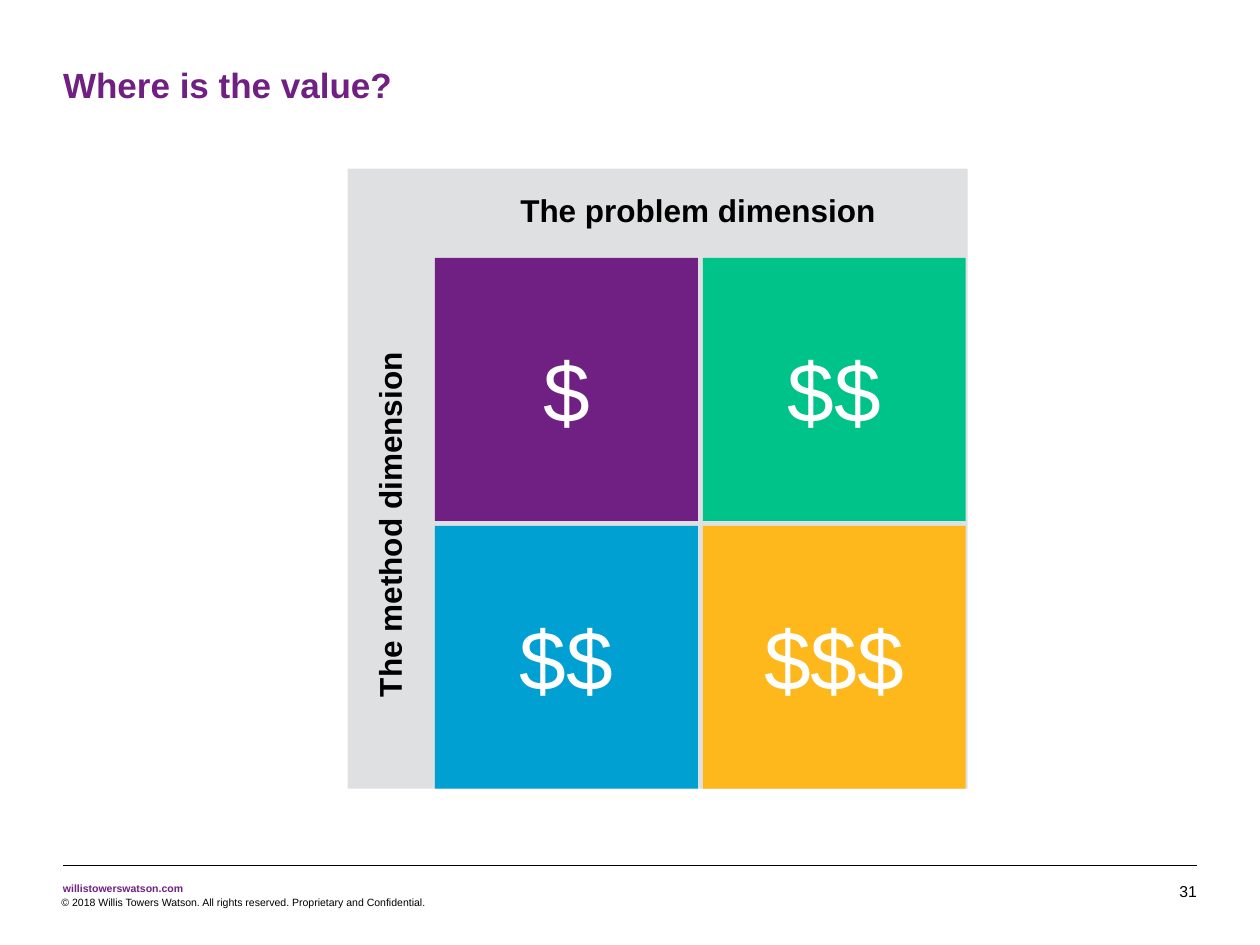
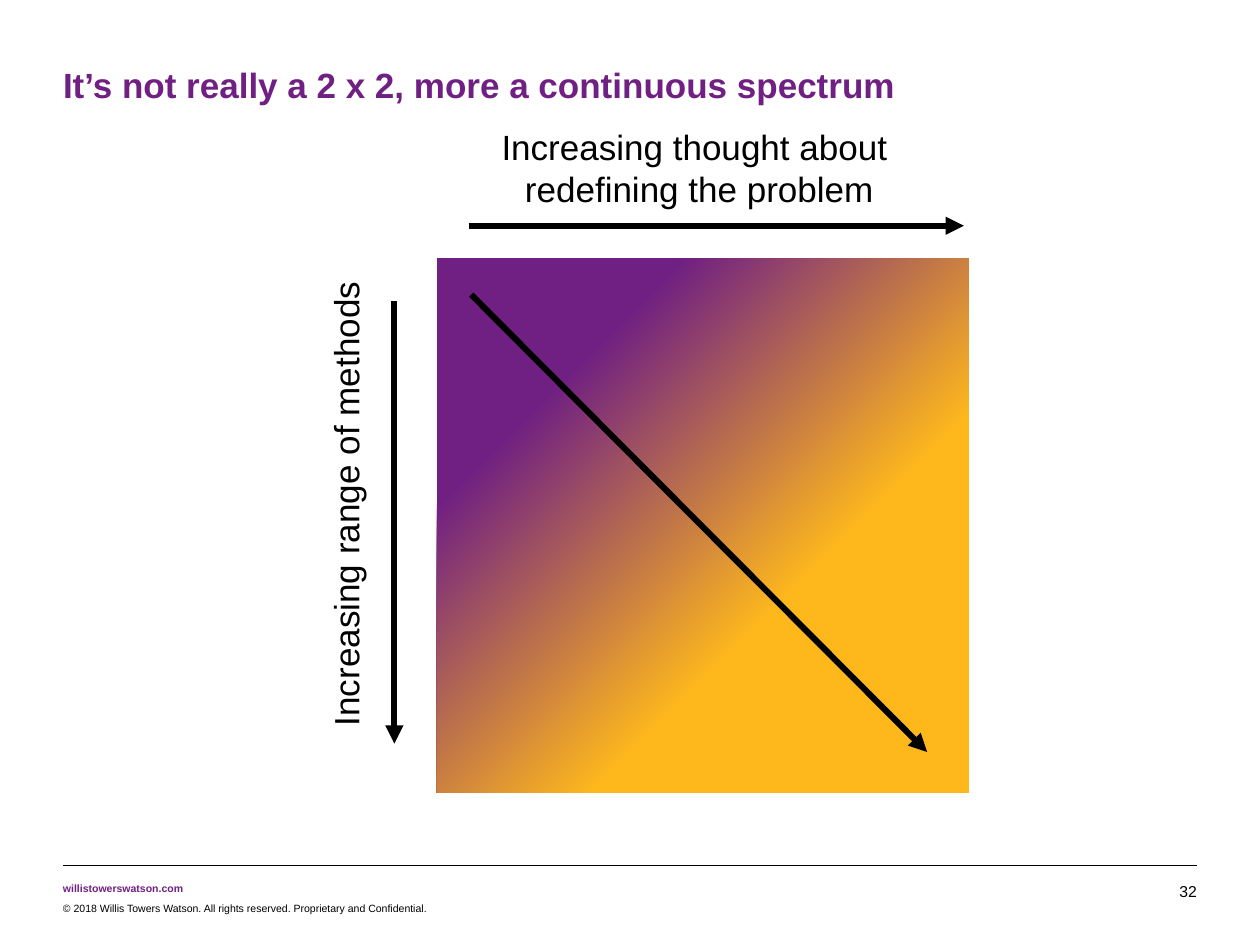
from copy import deepcopy
from dataclasses import dataclass

from pptx import Presentation
from pptx.dml.color import RGBColor
from pptx.enum.shapes import MSO_CONNECTOR, MSO_SHAPE
from pptx.enum.text import MSO_ANCHOR, MSO_AUTO_SIZE, PP_ALIGN
from pptx.oxml.ns import qn
from pptx.util import Cm, Pt
from lxml import etree

LINE = MSO_CONNECTOR.STRAIGHT
RECT = MSO_SHAPE.RECTANGLE
TOP, MID, LOW = MSO_ANCHOR.TOP, MSO_ANCHOR.MIDDLE, MSO_ANCHOR.BOTTOM
LEFT, MIDDLE, RIGHT = PP_ALIGN.LEFT, PP_ALIGN.CENTER, PP_ALIGN.RIGHT
FIXED = MSO_AUTO_SIZE.NONE


@dataclass(frozen=True)
class Theme:
    font: str = "Arial"
    plum: str = "702082"
    green: str = "00C389"
    blue: str = "00A0D2"
    gold: str = "FFB81C"
    grey: str = "DFE0E2"
    black: str = "000000"
    white: str = "FFFFFF"
    head: int = 20
    label: int = 18
    money: int = 48
    page: int = 9
    small: int = 6
    thin: float = 0.25
    thick: float = 3.5


T = Theme()

SITE = "willistowerswatson.com"
RIGHTS = "© 2018 Willis Towers Watson. All rights reserved. Proprietary and Confidential."

VALUE = {
    "title": "Where is the value?",
    "page": "31",
    "rights": (1.24, 18.06),
    "labels": [
        ("The problem dimension", (10.24, 3.73, 7.75, 1.02), 0),
        ("The method dimension", (4.09, 10.03, 7.52, 1.02), 270),
    ],
    "cells": [
        [("$", T.plum), ("$$", T.green)],
        [("$$", T.blue), ("$$$", T.gold)],
    ],
}
PANEL = (7.01, 3.4, 12.5, 12.5)
GRID = (8.77, 5.2)
SIDE, GAP = 5.3, 0.1

RANGE = {
    "title": "It’s not really a 2 x 2, more a continuous spectrum",
    "page": "32",
    "rights": (1.27, 18.19),
    "labels": [
        ("Increasing thought about \nredefining the problem", (7.85, 2.41, 12.5, 1.96), 0, True),
        ("Increasing range of methods", (2.21, 9.6, 9.53, 1.12), 270, False),
    ],
    "stops": [(0, T.plum), (0.23, T.plum), (0.65, T.gold), (0.96, T.gold)],
    "arrows": [
        (7.95, 6.07, 7.95, 14.99),
        (9.5, 5.94, 18.69, 15.16),
        (9.45, 4.55, 19.43, 4.55),
    ],
}
FIELD = (8.81, 5.21, 10.72, 10.77)


def rgb(code):
    return RGBColor.from_string(code)


def put(item, values):
    for name, value in values.items():
        setattr(item, name, value)


def write(shape, text, size, color=T.black, bold=False, align=LEFT,
          anchor=TOP, wrap=True, inset=None):
    frame = shape.text_frame
    put(frame, {"auto_size": FIXED, "word_wrap": wrap, "vertical_anchor": anchor})
    if inset is not None:
        for side in ("left", "top", "right", "bottom"):
            setattr(frame, "margin_" + side, Cm(inset))
    para = frame.paragraphs[0]
    para.text = text
    para.alignment = align
    for run in para.runs:
        put(run.font, {"name": T.font, "size": Pt(size), "bold": bold})
        run.font.color.rgb = rgb(color)


def label(slide, text, box, size, turn=0, **style):
    shape = slide.shapes.add_textbox(*map(Cm, box))
    shape.rotation = turn
    write(shape, text, size, **style)


def block(slide, box, color=None):
    shape = slide.shapes.add_shape(RECT, *map(Cm, box))
    shape.shadow.inherit = False
    shape.line.fill.background()
    if color:
        shape.fill.solid()
        shape.fill.fore_color.rgb = rgb(color)
    return shape


def stroke(slide, ends, width, arrow=False):
    line = slide.shapes.add_connector(LINE, *map(Cm, ends))
    line.line.width = Pt(width)
    line.line.color.rgb = rgb(T.black)
    props = line._element.spPr
    if arrow:
        etree.SubElement(props.find(qn("a:ln")), qn("a:tailEnd"), type="triangle")
    etree.SubElement(props, qn("a:effectLst"))


def blend(shape, stops):
    fill = shape.fill
    fill.gradient()
    fill.gradient_angle = 315
    marks = shape._element.spPr.find(".//" + qn("a:gsLst"))
    while len(marks) < len(stops):
        marks.append(deepcopy(marks[-1]))
    for mark, (place, color) in zip(fill.gradient_stops, stops):
        mark.position = place
        mark.color.rgb = rgb(color)


def start(deck, data):
    slide = deck.slides.add_slide(deck.slide_layouts[5])
    title = slide.shapes.title
    box = map(Cm, (1.27, 1.27, 22.86, 0.86))
    put(title, dict(zip(("left", "top", "width", "height"), box)))
    write(title, data["title"], T.head, T.plum, True, anchor=MID, inset=0)
    stroke(slide, (1.27, 17.45, 24.13, 17.45), T.thin)
    label(slide, SITE, (1.27, 17.78, 2.44, 0.25), T.small,
          color=T.plum, bold=True, wrap=False, inset=0)
    label(slide, RIGHTS, (*data["rights"], 14.66, 0.25), T.small, inset=0)
    label(slide, data["page"], (23.06, 17.78, 1.07, 0.38), T.page,
          align=RIGHT, anchor=LOW, inset=0)
    return slide


def value(deck):
    slide = start(deck, VALUE)
    block(slide, PANEL, T.grey)
    left, top = GRID
    step = SIDE + GAP
    for row, cells in enumerate(VALUE["cells"]):
        for col, (text, color) in enumerate(cells):
            cell = block(slide, (left + col * step, top + row * step, SIDE, SIDE), color)
            write(cell, text, T.money, T.white, align=MIDDLE, anchor=MID)
    for text, box, turn in VALUE["labels"]:
        label(slide, text, box, T.label, turn, bold=True, wrap=False)


def spectrum(deck):
    slide = start(deck, RANGE)
    for text, box, turn, wrap in RANGE["labels"]:
        label(slide, text, box, T.head, turn, align=MIDDLE, wrap=wrap)
    blend(block(slide, FIELD), RANGE["stops"])
    for ends in RANGE["arrows"]:
        stroke(slide, ends, T.thick, True)


def main():
    deck = Presentation()
    put(deck, {"slide_width": Cm(25.4), "slide_height": Cm(19.05)})
    value(deck)
    spectrum(deck)
    deck.save("out.pptx")


if __name__ == "__main__":
    main()
